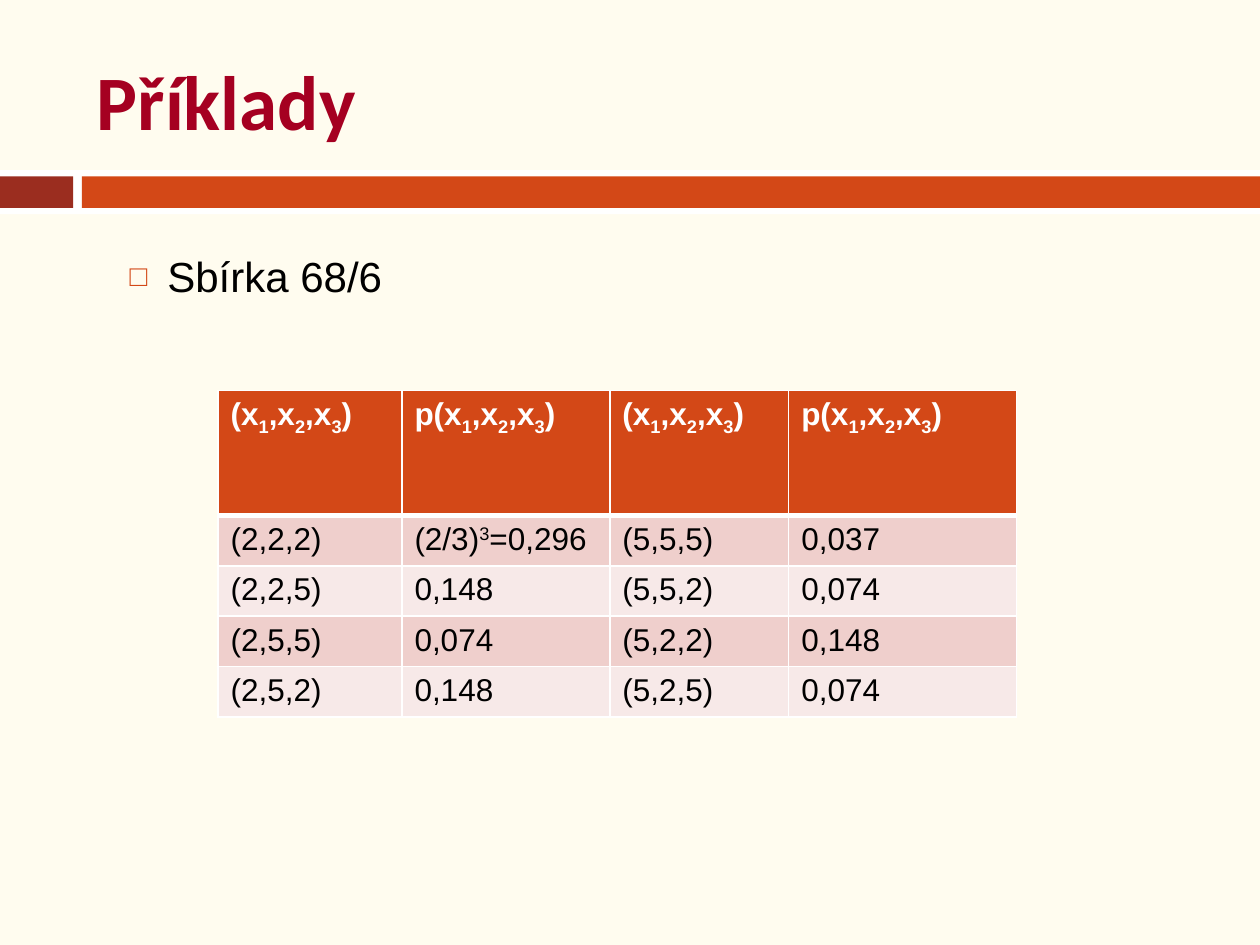
from dataclasses import dataclass

from lxml.etree import SubElement
from pptx import Presentation
from pptx.dml.color import RGBColor
from pptx.enum.shapes import MSO_SHAPE
from pptx.enum.text import MSO_ANCHOR
from pptx.oxml.ns import qn
from pptx.util import Emu, Inches, Pt


@dataclass(frozen=True)
class Theme:
    background: str = "FFFCEF"
    white: str = "FFFFFF"
    black: str = "000000"
    title: str = "A50021"
    accent: str = "D34817"
    dark_accent: str = "9B2D1F"
    bands: tuple = ("EFCFCC", "F7E9E8")
    title_font: str = "Calibri"
    body_font: str = "Arial"
    title_size: int = 44
    body_size: int = 24
    table_size: int = 18


THEME = Theme()
WIDTH, HEIGHT = 10, 7.5
BASELINES = {"_": -25000, "^": 30000}  # each mark shifts the next character

COLUMN_WIDTHS = (1.46, 1.65, 1.42, 1.81)
HEADER_HEIGHT, ROW_HEIGHT = 0.99, 0.4
TRIPLE = "(x_1,x_2,x_3)"
ROWS = (
    (TRIPLE, "p" + TRIPLE) * 2,
    ("(2,2,2)", "(2/3)^3=0,296", "(5,5,5)", "0,037"),
    ("(2,2,5)", "0,148", "(5,5,2)", "0,074"),
    ("(2,5,5)", "0,074", "(5,2,2)", "0,148"),
    ("(2,5,2)", "0,148", "(5,2,5)", "0,074"),
)


def color(value):
    return RGBColor.from_string(value)


def split_baselines(text):
    """Return (text, baseline) pieces of marked text."""
    pieces, baseline = [], 0
    for character in text:
        if character in BASELINES:
            baseline = BASELINES[character]
        elif baseline or not pieces or pieces[-1][1]:
            pieces.append((character, baseline))
            baseline = 0
        else:
            pieces[-1] = (pieces[-1][0] + character, 0)
    return pieces


def write_text(paragraph, text, *, size, font, fill, bold=False):
    for piece, baseline in split_baselines(text):
        run = paragraph.add_run()
        run.text = piece
        run.font.size = Pt(size)
        run.font.name = font
        run.font.bold = bold
        run.font.color.rgb = color(fill)
        if baseline:
            run.font._element.set("baseline", str(baseline))


def add_bar(slide, left, top, width, height, fill):
    shape = slide.shapes.add_shape(
        MSO_SHAPE.RECTANGLE, *map(Inches, (left, top, width, height)))
    shape.shadow.inherit = False
    shape.fill.solid()
    shape.fill.fore_color.rgb = color(fill)
    shape.line.fill.background()


def add_text_box(slide, left, top, width, height, anchor=MSO_ANCHOR.TOP):
    shape = slide.shapes.add_textbox(*map(Inches, (left, top, width, height)))
    shape.text_frame.word_wrap = True
    shape.text_frame.vertical_anchor = anchor
    return shape.text_frame.paragraphs[0]


def set_bullet(paragraph, character, fill, percent, margin, indent):
    properties = paragraph._p.get_or_add_pPr()
    properties.set("marL", str(Inches(margin)))
    properties.set("indent", str(Inches(indent)))
    bullet_color = SubElement(properties, qn("a:buClr"))
    SubElement(bullet_color, qn("a:srgbClr"), val=fill)
    SubElement(properties, qn("a:buSzPct"), val=str(percent * 1000))
    SubElement(properties, qn("a:buFont"), typeface=THEME.body_font)
    SubElement(properties, qn("a:buChar"), char=character)


def set_borders(cell, widths):
    properties = cell._tc.get_or_add_tcPr()
    for side, width in zip("LRTB", widths):
        line = SubElement(properties, qn(f"a:ln{side}"), w=str(Pt(width)))
        fill = SubElement(line, qn("a:solidFill"))
        SubElement(fill, qn("a:srgbClr"), val=THEME.white)


def add_probability_table(slide, left, top):
    height = HEADER_HEIGHT + ROW_HEIGHT * (len(ROWS) - 1)
    table = slide.shapes.add_table(
        len(ROWS), len(COLUMN_WIDTHS),
        *map(Inches, (left, top, sum(COLUMN_WIDTHS), height))).table
    table.first_row = table.horz_banding = False
    for column, width in zip(table.columns, COLUMN_WIDTHS):
        column.width = Inches(width)
    for index, values in enumerate(ROWS):
        header = index == 0
        table.rows[index].height = Inches(HEADER_HEIGHT if header else ROW_HEIGHT)
        for cell, value in zip(table.rows[index].cells, values):
            # Thick rule between the header and the first data row
            set_borders(cell, (1, 1, 3 if index == 1 else 1, 3 if header else 1))
            cell.fill.solid()
            cell.fill.fore_color.rgb = color(
                THEME.accent if header else THEME.bands[(index - 1) % 2])
            write_text(cell.text_frame.paragraphs[0], value,
                       size=THEME.table_size, font=THEME.body_font,
                       fill=THEME.white if header else THEME.black, bold=header)


def main():
    presentation = Presentation()
    presentation.slide_width = Inches(WIDTH)
    presentation.slide_height = Inches(HEIGHT)
    slide = presentation.slides.add_slide(presentation.slide_layouts[6])
    slide.background.fill.solid()
    slide.background.fill.fore_color.rgb = color(THEME.background)

    # Band under the title
    add_bar(slide, 0, 1.35, WIDTH, 0.35, THEME.white)
    add_bar(slide, 0, 1.4, 0.58, 0.25, THEME.dark_accent)
    add_bar(slide, 0.65, 1.4, WIDTH - 0.65, 0.25, THEME.accent)

    # Title
    title = add_text_box(slide, 0.67, 0.25, 8.92, 1.08, MSO_ANCHOR.MIDDLE)
    write_text(title, "Příklady", size=THEME.title_size, font=THEME.title_font,
               fill=THEME.title, bold=True)

    # Bulleted reference
    reference = add_text_box(slide, 0.53, 1.94, 9.08, 4.92)
    reference.space_before = Pt(5.5)
    set_bullet(reference, "□", THEME.accent, 70, margin=0.7, indent=-0.3)
    write_text(reference, "Sbírka 68/6", size=THEME.body_size,
               font=THEME.body_font, fill=THEME.black)

    # Probabilities of the samples
    add_probability_table(slide, 1.73, 3.1)

    presentation.save("out.pptx")


if __name__ == "__main__":
    main()
